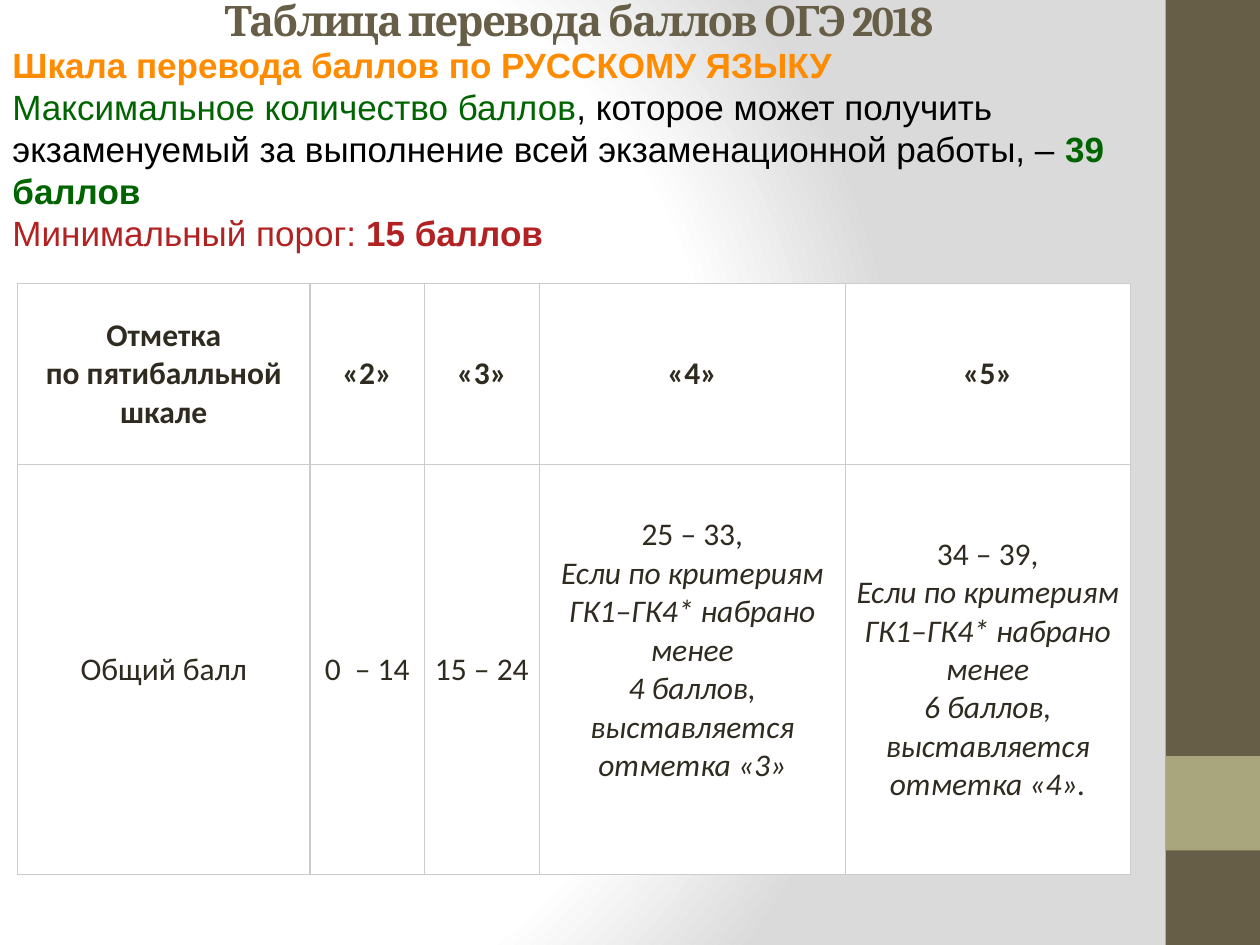
from dataclasses import dataclass

from pptx import Presentation
from pptx.dml.color import RGBColor
from pptx.enum.shapes import MSO_SHAPE as Preset
from pptx.enum.text import MSO_ANCHOR as Anchor, PP_ALIGN as Align
from pptx.oxml import parse_xml
from pptx.oxml.ns import nsdecls, qn
from pptx.slide import Slide
from pptx.util import Inches, Pt

COLORS = {
    "brown": "675E47",
    "olive": "A9A57C",
    "orange": "FF8C00",
    "green": "006400",
    "black": "000000",
    "red": "B22222",
    "ink": "2F2B20",
    "border": "CCCCCC",
    "white": "FFFFFF",
    "gray": "DADADA",
}


@dataclass(frozen=True)
class Band:
    top: float
    height: float
    color: str


@dataclass(frozen=True)
class Phrase:
    text: str
    color: str
    bold: bool = False


@dataclass(frozen=True)
class Line:
    text: str
    bold: bool = False
    italic: bool = False


BANDS = [Band(0, 7.5, "brown"), Band(6, 0.75, "olive")]
TITLE = "Таблица перевода баллов ОГЭ 2018\v"
INTRO = [
    [Phrase("Шкала перевода баллов по РУССКОМУ ЯЗЫКУ", "orange", True)],
    [
        Phrase("Максимальное количество баллов", "green"),
        Phrase(", которое может получить экзаменуемый за выполнение всей "
               "экзаменационной работы, – ", "black"),
        Phrase("39 баллов", "green", True),
    ],
    [Phrase("Минимальный порог: ", "red"), Phrase("15 баллов", "red", True)],
]
MARKS = ["Отметка\vпо пятибалльной шкале", "«2»", "«3»", "«4»", "«5»"]
CONDITION = "Если по критериям ГК1–ГК4* набрано менее\v{} баллов, выставляется отметка {}"
SCALE = [
    [[Line(mark, bold=True)] for mark in MARKS],
    [
        [Line("Общий балл")],
        [Line("0  – 14")],
        [Line("15 – 24")],
        [Line("25 – 33,"), Line(CONDITION.format(4, "«3»"), italic=True), Line(" ")],
        [Line("34 – 39,"), Line(CONDITION.format(6, "«4»."), italic=True)],
    ],
]
COLUMN_WIDTHS = [2.32, 0.91, 0.91, 2.43, 2.26]
ROW_HEIGHTS = [1.44, 3.25]


def rgb(color: str) -> RGBColor:
    return RGBColor.from_string(COLORS[color])


def set_font(font, name: str, size: float, color: str, bold: bool = False,
             italic: bool = False) -> None:
    font.name = name
    font.size = Pt(size)
    font.color.rgb = rgb(color)
    font.bold = bold
    font.italic = italic


def paint_background(slide: Slide) -> None:
    slide.background.fill.solid()
    stops = "".join(
        f'<a:gs pos="{percent * 1000}"><a:srgbClr val="{COLORS[color]}"/></a:gs>'
        for percent, color in [(0, "white"), (75, "white"), (100, "gray")]
    )
    gradient = parse_xml(
        f'<a:gradFill {nsdecls("a")} rotWithShape="1"><a:gsLst>{stops}</a:gsLst>'
        '<a:path path="circle"><a:fillToRect l="20000" t="50000" r="100000" b="50000"/>'
        '</a:path></a:gradFill>'
    )
    properties = slide.element.find(".//" + qn("p:bgPr"))
    properties.replace(properties[0], gradient)


def draw_band(slide: Slide, band: Band) -> None:
    stripe = slide.shapes.add_shape(Preset.RECTANGLE, Inches(9.25), Inches(band.top),
                                    Inches(0.75), Inches(band.height))
    stripe.shadow.inherit = False
    stripe.fill.solid()
    stripe.fill.fore_color.rgb = rgb(band.color)
    stripe.line.fill.background()


def add_text_frame(slide: Slide, left: float, top: float, width: float, height: float):
    frame = slide.shapes.add_textbox(Inches(left), Inches(top), Inches(width),
                                     Inches(height)).text_frame
    frame.word_wrap = True
    frame.vertical_anchor = Anchor.MIDDLE
    return frame


def draw_title(slide: Slide) -> None:
    heading = add_text_frame(slide, 0.43, 0.13, 8.33, 0.46).paragraphs[0]
    heading.text = TITLE
    heading.alignment = Align.CENTER
    set_font(heading.font, "Cambria", 24, "brown", bold=True)
    for run in heading.runs:
        run.font._element.set("spc", "-100")


def draw_intro(slide: Slide) -> None:
    frame = add_text_frame(slide, 0, 0.29, 9.09, 1.78)
    for index, phrases in enumerate(INTRO):
        paragraph = frame.add_paragraph() if index else frame.paragraphs[0]
        for phrase in phrases:
            run = paragraph.add_run()
            run.text = phrase.text
            set_font(run.font, "Arial", 20, phrase.color, phrase.bold)


def fill_cell(cell, lines: list[Line]) -> None:
    cell.fill.solid()
    cell.fill.fore_color.rgb = rgb("white")
    cell.vertical_anchor = Anchor.MIDDLE
    cell.margin_left = cell.margin_right = cell.margin_top = cell.margin_bottom = 0
    for index, line in enumerate(lines):
        frame = cell.text_frame
        paragraph = frame.add_paragraph() if index else frame.paragraphs[0]
        paragraph.text = line.text
        paragraph.alignment = Align.CENTER
        set_font(paragraph.font, "Calibri", 18, "ink", line.bold, line.italic)
    properties = cell._tc.get_or_add_tcPr()
    for position, side in enumerate(["lnL", "lnR", "lnT", "lnB"]):
        properties.insert(position, parse_xml(
            f'<a:{side} {nsdecls("a")} w="{Pt(0.75)}"><a:solidFill>'
            f'<a:srgbClr val="{COLORS["border"]}"/></a:solidFill></a:{side}>'
        ))


def draw_scale(slide: Slide) -> None:
    table = slide.shapes.add_table(
        len(SCALE), len(MARKS), Inches(0.14), Inches(2.25),
        Inches(sum(COLUMN_WIDTHS)), Inches(sum(ROW_HEIGHTS)),
    ).table
    table.first_row = table.horz_banding = False
    for column, width in zip(table.columns, COLUMN_WIDTHS):
        column.width = Inches(width)
    for row, height, contents in zip(table.rows, ROW_HEIGHTS, SCALE):
        row.height = Inches(height)
        for cell, lines in zip(row.cells, contents):
            fill_cell(cell, lines)


def main() -> None:
    presentation = Presentation()
    presentation.slide_width = Inches(10)
    presentation.slide_height = Inches(7.5)
    slide = presentation.slides.add_slide(presentation.slide_layouts[6])
    paint_background(slide)
    for band in BANDS:
        draw_band(slide, band)
    draw_title(slide)
    draw_scale(slide)
    draw_intro(slide)
    presentation.save("out.pptx")


if __name__ == "__main__":
    main()
